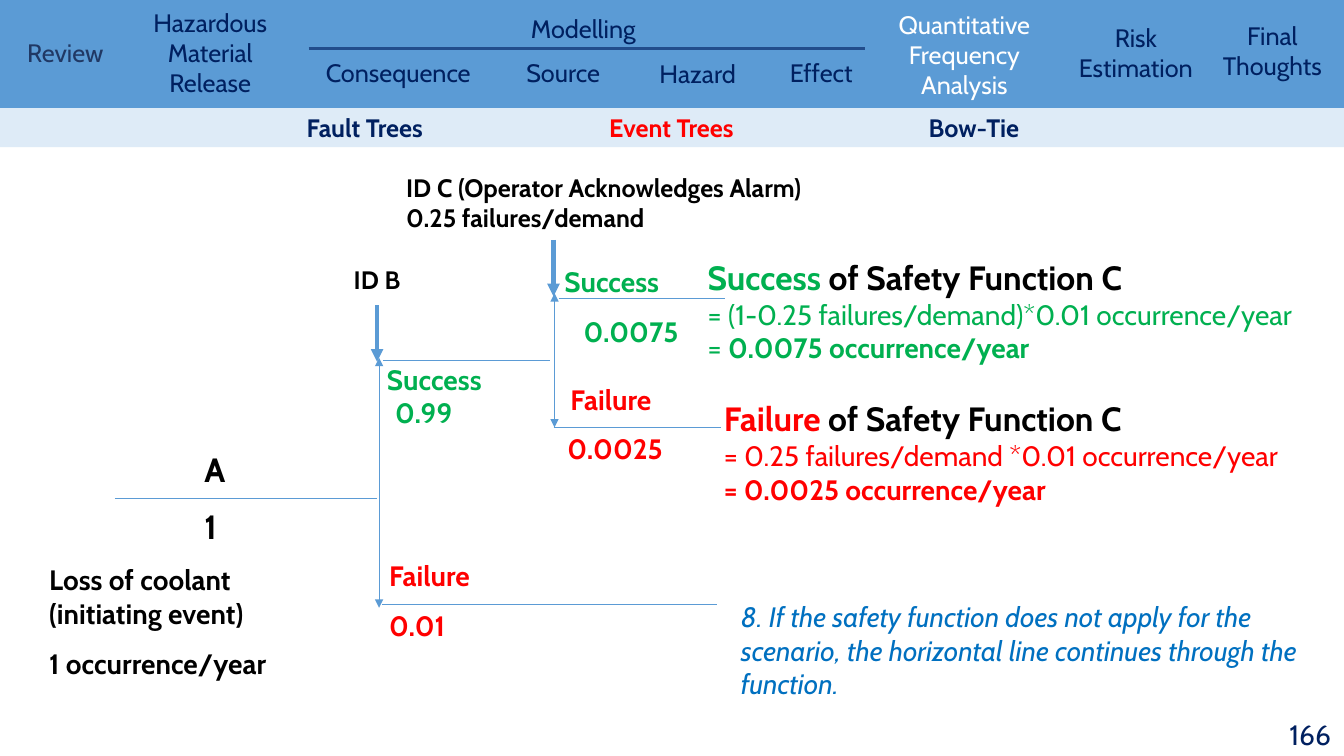
from lxml import etree
from pptx import Presentation
from pptx.dml.color import RGBColor
from pptx.enum.shapes import MSO_CONNECTOR, MSO_SHAPE
from pptx.enum.text import MSO_ANCHOR, MSO_AUTO_SIZE, PP_ALIGN
from pptx.oxml.ns import qn
from pptx.util import Inches, Pt

LEFT, CENTER, RIGHT = PP_ALIGN.LEFT, PP_ALIGN.CENTER, PP_ALIGN.RIGHT
TOP, MIDDLE = MSO_ANCHOR.TOP, MSO_ANCHOR.MIDDLE
NO_AUTOFIT = MSO_AUTO_SIZE.NONE
RECT, STRAIGHT = MSO_SHAPE.RECTANGLE, MSO_CONNECTOR.STRAIGHT
FONT = "Cabin"
COLORS = {
    "blue": "5B9BD5", "pale": "DEEBF7", "navy": "002060", "muted": "203864",
    "rule": "224D8C", "white": "FFFFFF", "black": "000000",
    "green": "00B050", "red": "FF0000", "note": "0070C0",
}
NAV = [
    ("Review", 0.17, 0.32, 1.11, 0.4, "muted", LEFT),
    ("Hazardous Material Release", 1.27, 0.02, 1.63, 1, "navy", CENTER),
    ("Modelling", 3.06, 0.08, 5.45, 0.4, "navy", CENTER),
    ("Consequence", 3.06, 0.52, 1.78, 0.4, "navy", CENTER),
    ("Source", 4.59, 0.52, 1.99, 0.4, "navy", CENTER),
    ("Hazard", 6.1, 0.53, 1.64, 0.38, "navy", CENTER),
    ("Effect", 7.27, 0.52, 1.75, 0.39, "navy", CENTER),
    ("Quantitative Frequency Analysis", 8.69, 0.04, 1.75, 0.96, "white", CENTER),
    ("Risk Estimation", 10.39, 0.17, 1.75, 0.69, "navy", CENTER),
    ("Final Thoughts", 11.84, 0.15, 1.56, 0.74, "navy", CENTER),
]
TABS = [("Fault Trees", "navy"), ("\tEvent Trees", "red"), ("\tBow-Tie", "navy")]
TAB_STOPS = (3, 6.17)
BRANCH_LINES = [
    (1.14, 4.94, 3.74, 4.94),
    (3.8, 3.58, 5.45, 3.58),
    (3.79, 6, 7.11, 6),
    (5.54, 2.96, 7.19, 2.96),
    (5.49, 4.24, 7.15, 4.24),
]
SPLITS = [(3.76, 3.55, 3.76, 6.03), (5.5, 2.91, 5.5, 4.24)]
POINTERS = [(3.74, 3.03, 3.74, 3.59), (5.49, 2.38, 5.49, 2.94)]
BRANCH_LABELS = [
    ("Success", 3.74, 3.55, 2.47, "green"),
    ("0.99", 3.82, 3.87, 0.91, "green"),
    ("Failure", 3.76, 5.49, 2.12, "red"),
    ("0.01", 3.76, 5.99, 0.91, "red"),
    ("Success", 5.5, 2.58, 2.47, "green"),
    ("0.0075", 5.69, 3.07, 1.19, "green"),
    ("Failure", 5.56, 3.75, 2.12, "red"),
    ("0.0025", 5.53, 4.23, 1.59, "red"),
]
RESULTS = [
    ("Success ", "green", 6.92, 2.5, 6.42,
     "= (1-0.25 failures/demand)*0.01 occurrence/year",
     [("= ", False), ("0.0075 occurrence/year", True)]),
    ("Failure ", "red", 7.08, 3.9, 6.25,
     "= 0.25 failures/demand *0.01 occurrence/year",
     [("= 0.0025 occurrence/year", True)]),
]


def rgb(name):
    """Return the palette colour with this name."""
    return RGBColor.from_string(COLORS[name])


def style(font, size, color, bold=False, italic=False):
    """Format a font."""
    font.name, font.size = FONT, Pt(size)
    font.bold, font.italic = bold, italic
    font.color.rgb = rgb(color)


def add_run(p, text, size, color, bold):
    """Append one formatted run to a paragraph."""
    r = p.add_run()
    r.text = text
    style(r.font, size, color, bold)


def add_text(s, text, x, y, w, h, size, color, bold=False, italic=False,
             align=LEFT, anchor=TOP):
    """Add a wrapped text box in one style and return its text frame."""
    tf = s.shapes.add_textbox(Inches(x), Inches(y), Inches(w), Inches(h)).text_frame
    tf.word_wrap, tf.vertical_anchor = True, anchor
    tf.text = text
    for p in tf.paragraphs:
        p.alignment, p.space_after = align, Pt(12)
        for r in p.runs:
            style(r.font, size, color, bold, italic)
    return tf


def add_line(s, x1, y1, x2, y2, width=0.5, color="blue", ends=()):
    """Add a straight line with triangles at the named ends."""
    line = s.shapes.add_connector(STRAIGHT, Inches(x1), Inches(y1), Inches(x2), Inches(y2))
    line.line.width = Pt(width)
    line.line.color.rgb = rgb(color)
    ln = line.line._get_or_add_ln()
    for end in ends:
        etree.SubElement(ln, qn(f"a:{end}"), type="triangle")
    etree.SubElement(line._element.spPr, qn("a:effectLst"))


def add_nav(s):
    """Add the top navigation band with its chapter names."""
    band = s.shapes.add_shape(RECT, 0, 0, Inches(13.33), Inches(1.07))
    band.shadow.inherit = False
    band.fill.solid()
    band.fill.fore_color.rgb = rgb("blue")
    band.line.fill.background()
    for text, x, y, w, h, color, align in NAV:
        add_text(s, text, x, y, w, h, 18, color, align=align)
    add_line(s, 3.06, 0.48, 8.58, 0.48, 2.25, "rule")


def add_section_title(s):
    """Turn the title placeholder into the band of section tabs."""
    title = s.shapes.title
    title.left, title.top = Inches(0), Inches(1.06)
    title.width, title.height = Inches(13.33), Inches(0.4)
    title.fill.solid()
    title.fill.fore_color.rgb = rgb("pale")
    tf = title.text_frame
    tf.auto_size, tf.vertical_anchor = NO_AUTOFIT, MIDDLE
    tf.margin_left = Inches(3.04)
    p = tf.paragraphs[0]
    p.alignment = LEFT
    tab_list = etree.SubElement(p._p.get_or_add_pPr(), qn("a:tabLst"))
    for stop in TAB_STOPS:
        etree.SubElement(tab_list, qn("a:tab"), pos=str(Inches(stop)), algn="l")
    for text, color in TABS:
        add_run(p, text, 18, color, True)


def add_result(s, outcome, color, x, y, w, formula, answer):
    """Add the calculation for one outcome of safety function C."""
    tf = add_text(s, "", x, y, w, 1.18, 24, color)
    p = tf.paragraphs[0]
    add_run(p, outcome, 24, color, True)
    add_run(p, "of Safety Function C", 24, "black", True)
    p.add_line_break()
    add_run(p, formula, 20, color, False)
    p.add_line_break()
    for text, bold in answer:
        add_run(p, text, 20, color, bold)


def add_tree(s):
    """Add the lines, arrows and labels of the event tree."""
    for ends in BRANCH_LINES:
        add_line(s, *ends)
    for ends in SPLITS:
        add_line(s, *ends, ends=("headEnd", "tailEnd"))
    for ends in POINTERS:
        add_line(s, *ends, width=3, ends=("tailEnd",))
    for text, x, y, w, color in BRANCH_LABELS:
        add_text(s, text, x, y, w, 0.44, 20, color, True)
    add_text(s, "A\n1", 1.93, 4.4, 0.6, 1.08, 24, "black", True)
    add_text(s, "Loss of coolant (initiating event)\n1 occurrence/year",
             0.39, 5.53, 3.06, 1.28, 20, "black", True)
    add_text(s, "ID B", 3.09, 2.57, 1.3, 0.4, 18, "black", True, align=CENTER)
    add_text(s, "ID C (Operator Acknowledges Alarm)\v0.25 failures/demand",
             3.93, 1.66, 5.34, 0.71, 18, "black", True)


def main():
    """Build the event tree slide and save it."""
    prs = Presentation()
    prs.slide_width, prs.slide_height = Inches(13.33), Inches(7.5)
    s = prs.slides.add_slide(prs.slide_layouts[5])
    add_nav(s)
    add_section_title(s)
    add_tree(s)
    for result in RESULTS:
        add_result(s, *result)
    add_text(s, "8. If the safety function does not apply for the scenario, "
             "the horizontal line continues through the function.",
             7.25, 5.9, 6.08, 1.11, 20, "note", italic=True)
    add_text(s, "166", 10.19, 7.08, 3.11, 0.4, 20, "navy", align=RIGHT, anchor=MIDDLE)
    prs.save("out.pptx")


if __name__ == "__main__":
    main()
